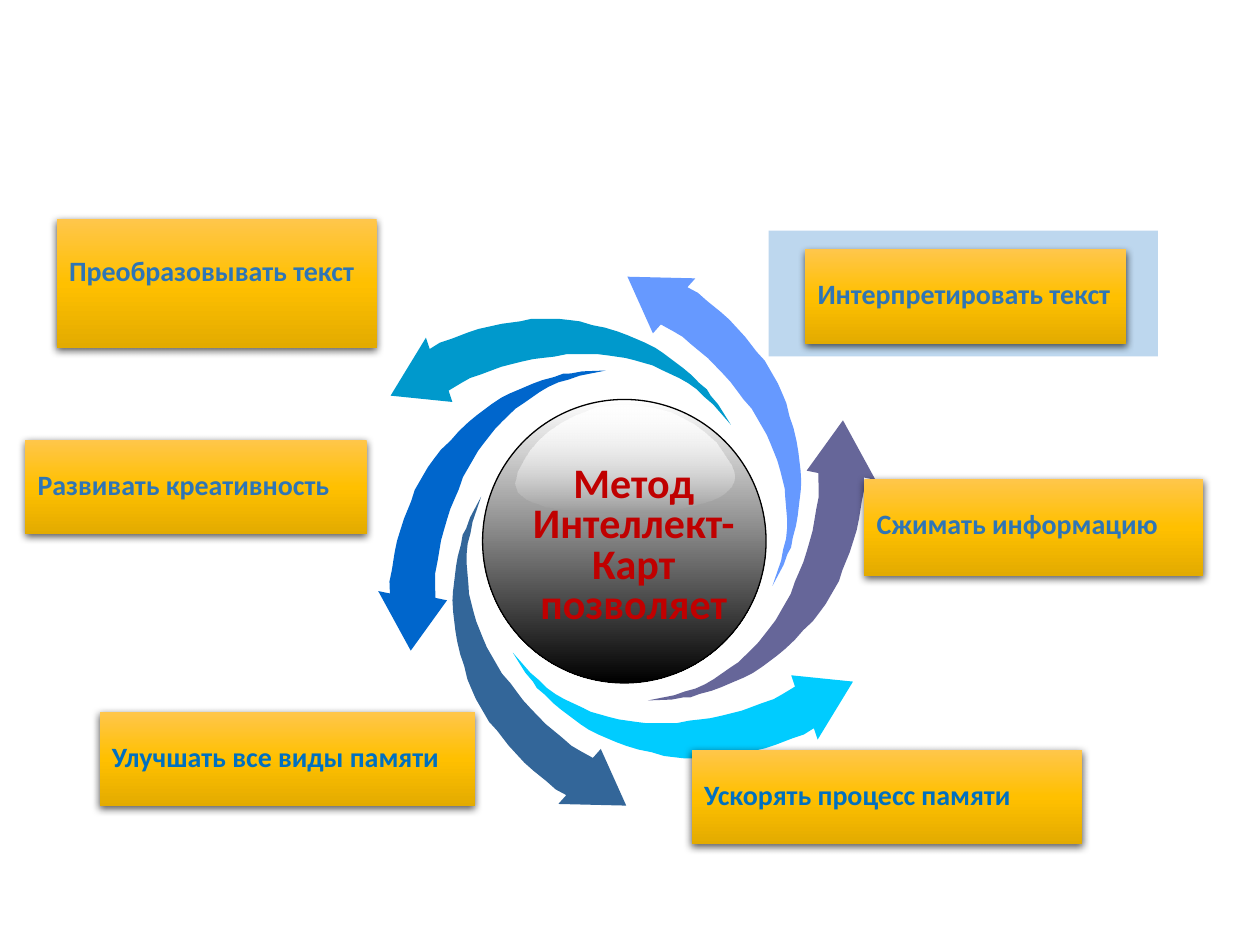
"""Build a slide with a ring of arrows around a sphere and six labelled benefits."""
from lxml import etree
from pptx import Presentation
from pptx.dml.color import RGBColor
from pptx.enum.shapes import MSO_SHAPE
from pptx.enum.text import MSO_ANCHOR, PP_ALIGN
from pptx.oxml.ns import qn
from pptx.util import Inches, Pt

PALE_BLUE = RGBColor(0xBD, 0xD7, 0xEE)
STEEL_BLUE = RGBColor(0x2E, 0x75, 0xB6)
BRIGHT_BLUE = RGBColor(0x00, 0x70, 0xC0)
DARK_RED = RGBColor(0xC0, 0x00, 0x00)
BLACK = RGBColor(0x00, 0x00, 0x00)
WHITE = RGBColor(0xFF, 0xFF, 0xFF)
GOLD_LIGHT = RGBColor(0xFF, 0xC6, 0x4B)
GOLD = RGBColor(0xFF, 0xC0, 0x00)
GOLD_DARK = RGBColor(0xE3, 0xAB, 0x00)
CYAN = RGBColor(0x00, 0xCC, 0xFF)
SLATE = RGBColor(0x33, 0x66, 0x99)
ROYAL = RGBColor(0x00, 0x66, 0xCC)
TEAL = RGBColor(0x00, 0x99, 0xCC)
PERIWINKLE = RGBColor(0x66, 0x99, 0xFF)
PURPLE = RGBColor(0x66, 0x66, 0x99)

ARROW_OUTLINE = [
    (631, 545), (628, 536), (677, 541), (649, 587), (646, 578), (638, 583),
    (629, 586), (616, 591), (607, 594), (598, 596), (589, 598), (574, 600),
    (565, 602), (551, 602), (544, 602), (535, 601), (527, 600), (517, 597),
    (507, 595), (497, 592), (489, 589), (475, 583), (467, 579), (461, 575),
    (453, 569), (445, 563), (439, 558), (432, 551), (426, 546), (423, 541),
    (417, 534), (407, 518), (421, 534), (428, 540), (434, 546), (441, 551),
    (448, 555), (463, 562), (469, 565), (476, 567), (483, 569), (491, 571),
    (505, 573), (513, 574), (527, 574), (537, 574), (547, 572), (556, 571),
    (564, 570), (573, 568), (581, 566), (589, 564), (597, 561), (605, 558),
    (614, 555), (621, 551),
]
GLOSS_OUTLINE = [
    (580, 369), (582, 374), (583, 378), (582, 382), (580, 386), (576, 390),
    (572, 393), (566, 396), (560, 398), (553, 400), (545, 402), (536, 404),
    (527, 405), (517, 406), (472, 406), (463, 405), (455, 405), (447, 404),
    (440, 403), (433, 402), (428, 400), (422, 398), (418, 396), (414, 393),
    (411, 390), (410, 387), (409, 383), (410, 379), (411, 374), (416, 365),
    (421, 357), (428, 349), (436, 342), (445, 336), (454, 331), (464, 327),
    (474, 323), (485, 322), (497, 321), (509, 322), (520, 324), (532, 327),
    (542, 332), (551, 337), (560, 344), (568, 351), (574, 360),
]
ARROWS = [
    (4.07, 5.18, CYAN),
    (2.78, 4.9, SLATE),
    (2.42, 3.48, ROYAL),
    (3.1, 2.53, TEAL),
    (4.47, 2.85, PERIWINKLE),
    (4.83, 4.18, PURPLE),
]
LABELS = [
    ("Ускорять процесс памяти", 5.49, 5.95, 3.1, 0.75, 0.27, BRIGHT_BLUE),
    ("Сжимать информацию", 6.86, 3.8, 2.69, 0.77, 0.27, STEEL_BLUE),
    ("Преобразовывать текст", 0.45, 1.74, 2.54, 1.02, 0.32, STEEL_BLUE),
    ("Развивать креативность", 0.2, 3.49, 2.71, 0.75, 0.27, STEEL_BLUE),
    ("Улучшать все виды памяти", 0.79, 5.65, 2.98, 0.75, 0.27, BRIGHT_BLUE),
    ("Интерпретировать текст", 6.39, 1.98, 2.55, 0.75, 0.27, STEEL_BLUE),
]
TITLE_LINES = ["Метод", "Интеллект-", "Карт", "позволяет"]


def fill_downward(shape, stops):
    shape.fill.gradient()
    shape.fill.gradient_angle = 270
    stop_list = shape._element.spPr.find(".//" + qn("a:gsLst"))
    for old_stop in list(stop_list):
        stop_list.remove(old_stop)
    for position, color, opacity in stops:
        stop = etree.SubElement(stop_list, qn("a:gs"), pos=str(position * 1000))
        tint = etree.SubElement(stop, qn("a:srgbClr"), val=str(color))
        etree.SubElement(tint, qn("a:alpha"), val=str(opacity * 1000))


def write_line(para, text, size, color):
    para.line_spacing = 0.8
    span = para.add_run()
    span.text = text
    span.font.name = "Calibri"
    span.font.size = Pt(size)
    span.font.bold = True
    span.font.color.rgb = color


deck = Presentation()
deck.slide_width, deck.slide_height = Inches(10), Inches(7.5)
page = deck.slides.add_slide(deck.slide_layouts[6])
shapes = page.shapes

panel = shapes.add_shape(MSO_SHAPE.RECTANGLE, Inches(6.1), Inches(1.83), Inches(3.09), Inches(1))
panel.shadow.inherit = False
panel.fill.solid()
panel.fill.fore_color.rgb = PALE_BLUE
panel.line.fill.background()

for index, (left, top, color) in enumerate(ARROWS):
    builder = shapes.build_freeform(*ARROW_OUTLINE[0], scale=Inches(0.01))
    builder.add_line_segments(ARROW_OUTLINE[1:])
    arrow = builder.convert_to_shape()
    arrow.left, arrow.top = Inches(left), Inches(top)
    arrow.rotation = index * 60
    arrow.shadow.inherit = False
    arrow.fill.solid()
    arrow.fill.fore_color.rgb = color
    arrow.line.fill.background()

sphere = shapes.add_shape(MSO_SHAPE.OVAL, Inches(3.83), Inches(3.17), Inches(2.25), Inches(2.25))
sphere.shadow.inherit = False
fill_downward(sphere, [(0, WHITE, 100), (100, BLACK, 100)])
sphere.line.color.rgb = BLACK
sphere.line.width = Pt(0.75)

builder = shapes.build_freeform(*GLOSS_OUTLINE[0], scale=Inches(0.01))
builder.add_line_segments(GLOSS_OUTLINE[1:])
gloss = builder.convert_to_shape()
gloss.shadow.inherit = False
fill_downward(gloss, [(0, WHITE, 100), (100, WHITE, 0)])
gloss.line.fill.background()

for text, left, top, width, height, text_top, color in LABELS:
    box = shapes.add_shape(
        MSO_SHAPE.RECTANGLE, Inches(left), Inches(top), Inches(width), Inches(height)
    )
    fill_downward(box, [(0, GOLD_LIGHT, 100), (50, GOLD, 100), (100, GOLD_DARK, 100)])
    box.line.fill.background()
    box.shadow.inherit = False
    shadow = etree.SubElement(
        box._element.spPr.find(qn("a:effectLst")), qn("a:outerShdw"),
        blurRad=str(Pt(4.5)), dist=str(Pt(1.5)), dir="5400000", rotWithShape="0",
    )
    shade = etree.SubElement(shadow, qn("a:srgbClr"), val=str(BLACK))
    etree.SubElement(shade, qn("a:alpha"), val="63000")
    frame = box.text_frame
    frame.word_wrap = True
    frame.vertical_anchor = MSO_ANCHOR.TOP
    frame.margin_top = Inches(text_top)
    para = frame.paragraphs[0]
    para.alignment = PP_ALIGN.LEFT
    write_line(para, text, 16, color)

title = shapes.add_textbox(Inches(3.91), Inches(3.65), Inches(2.24), Inches(1.39))
frame = title.text_frame
frame.word_wrap = True
for index, text in enumerate(TITLE_LINES):
    para = frame.add_paragraph() if index else frame.paragraphs[0]
    para.alignment = PP_ALIGN.CENTER
    write_line(para, text, 24, DARK_RED)

deck.save("out.pptx")
